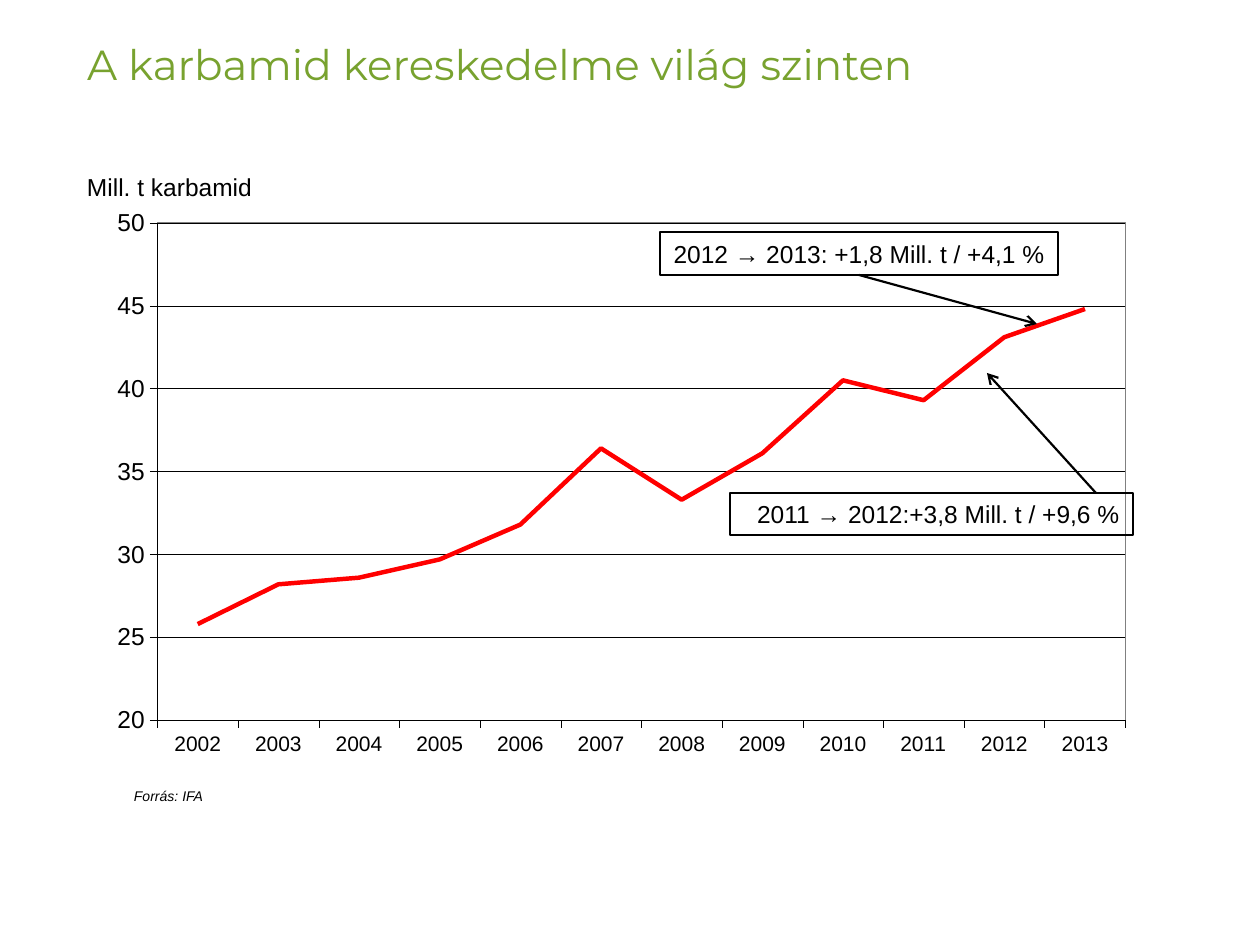
from lxml.etree import SubElement
from pptx import Presentation
from pptx.chart.data import CategoryChartData
from pptx.dml.color import RGBColor
from pptx.enum.chart import XL_CHART_TYPE, XL_MARKER_STYLE, XL_TICK_MARK
from pptx.enum.shapes import MSO_CONNECTOR, MSO_SHAPE
from pptx.enum.text import MSO_ANCHOR, PP_ALIGN
from pptx.oxml import parse_xml
from pptx.oxml.ns import nsdecls, qn
from pptx.util import Emu, Pt

# Content
TITLE = "A karbamid kereskedelme világ szinten"
YEARS = [str(year) for year in range(2002, 2014)]
TRADE = [25.8, 28.2, 28.6, 29.7, 31.8, 36.4, 33.3, 36.1, 40.5, 39.3, 43.1, 44.8]
LABELS = [  # text, box, format
    ("Mill. t karbamid", (74, 165, 192, 43), dict(size=14)),
    ("Forrás: IFA", (134, 782, 86, 27), dict(size=8, italic=True, left=0)),
]
CALLOUTS = [  # text, box, arrow start, arrow end
    ("2012 → 2013: +1,8 Mill. t / +4,1 %", (660, 232, 398, 43), (859, 275), (1037, 324)),
    ("2011 → 2012:+3,8 Mill. t / +9,6 %", (730, 493, 403, 42), (1096, 493), (987, 373)),
]
CHART_BOX = (64, 145, 1062, 714)
PLOT = dict(x=0.088, y=0.109, w=0.912, h=0.697)

BLACK = RGBColor(0, 0, 0)
WHITE = RGBColor(255, 255, 255)
GREEN = RGBColor(0x78, 0xA2, 0x2F)
RED = RGBColor(255, 0, 0)
GRAY = "808080"
PX = 914400 / 126


def px(*values):
    return [Emu(round(v * PX)) for v in values]


def write(tf, text, size=14, font="Arial", color=BLACK, italic=False,
          align=PP_ALIGN.LEFT, anchor=MSO_ANCHOR.MIDDLE, left=13, right=0):
    tf.word_wrap = True
    tf.vertical_anchor = anchor
    tf.margin_left, tf.margin_right, tf.margin_top, tf.margin_bottom = px(left, right, 6, 6)
    p = tf.paragraphs[0]
    p.alignment = align
    r = p.add_run()
    r.text = text
    r.font.size, r.font.name, r.font.italic = Pt(size), font, italic
    r.font.bold = False
    r.font.color.rgb = color


def stroke(line, color, width):
    line.color.rgb = color
    line.width = Pt(width)


prs = Presentation()
prs.slide_width, prs.slide_height = px(1260, 945)
s = prs.slides.add_slide(prs.slide_layouts[5])

# Title
title = s.shapes.title
title.left, title.top, title.width, title.height = px(74, 32, 1111, 117)
write(title.text_frame, TITLE, size=24, font="Montserrat", color=GREEN,
      anchor=MSO_ANCHOR.TOP)

# Line chart
data = CategoryChartData()
data.categories = YEARS
data.add_series("Series 1", TRADE)
chart = s.shapes.add_chart(XL_CHART_TYPE.LINE, *px(*CHART_BOX), data).chart
chart.has_legend = chart.has_title = False
chart.font.name, chart.font.size, chart.font.color.rgb = "Arial", Pt(14), BLACK

value_axis, category_axis = chart.value_axis, chart.category_axis
for axis, size in ((category_axis, 12), (value_axis, 14)):
    stroke(axis.format.line, BLACK, 0.21)
    axis.major_tick_mark = XL_TICK_MARK.OUTSIDE
    font = axis.tick_labels.font
    font.name, font.size, font.bold = "Arial", Pt(size), False
    font.color.rgb = BLACK
value_axis.minimum_scale, value_axis.maximum_scale = 20, 50
value_axis.major_unit = 5
value_axis.has_major_gridlines = True
stroke(value_axis.major_gridlines.format.line, BLACK, 0.21)

plot = chart.plots[0]
plot.vary_by_categories = False
series = plot.series[0]
series.smooth = False
series.marker.style = XL_MARKER_STYLE.NONE
stroke(series.format.line, RED, 2.54)

# Fixed inner plot area with a thin gray frame
plot_area = chart._chartSpace.chart.plotArea
for layout in plot_area.findall(qn("c:layout")):
    plot_area.remove(layout)
layout = parse_xml(f"<c:layout {nsdecls('c')}><c:manualLayout/></c:layout>")
settings = [("layoutTarget", "inner"), ("xMode", "edge"), ("yMode", "edge"), *PLOT.items()]
for tag, val in settings:
    SubElement(layout[0], qn(f"c:{tag}"), val=str(val))
plot_area.insert(0, layout)
plot_area.append(parse_xml(
    f"<c:spPr {nsdecls('c', 'a')}><a:noFill/><a:ln w='9525'><a:solidFill>"
    f"<a:srgbClr val='{GRAY}'/></a:solidFill></a:ln></c:spPr>"))

# Unit and source labels
for text, box, style in LABELS:
    write(s.shapes.add_textbox(*px(*box)).text_frame, text, **style)

# Callouts with arrows to the line
for i, (text, box, start, end) in enumerate(CALLOUTS):
    sp = s.shapes.add_shape(MSO_SHAPE.RECTANGLE, *px(*box))
    sp.shadow.inherit = False
    if i == 0:
        sp.fill.solid()
        sp.fill.fore_color.rgb = WHITE
    else:
        sp.fill.background()
    stroke(sp.line, BLACK, 0.75)
    write(sp.text_frame, text, align=PP_ALIGN.RIGHT, left=0, right=13)

    arrow = s.shapes.add_connector(MSO_CONNECTOR.STRAIGHT, *px(*start, *end))
    stroke(arrow.line, BLACK, 1.25)
    SubElement(arrow.line._get_or_add_ln(), qn("a:tailEnd"), type="arrow")
    SubElement(arrow._element.spPr, qn("a:effectLst"))

prs.save("out.pptx")
